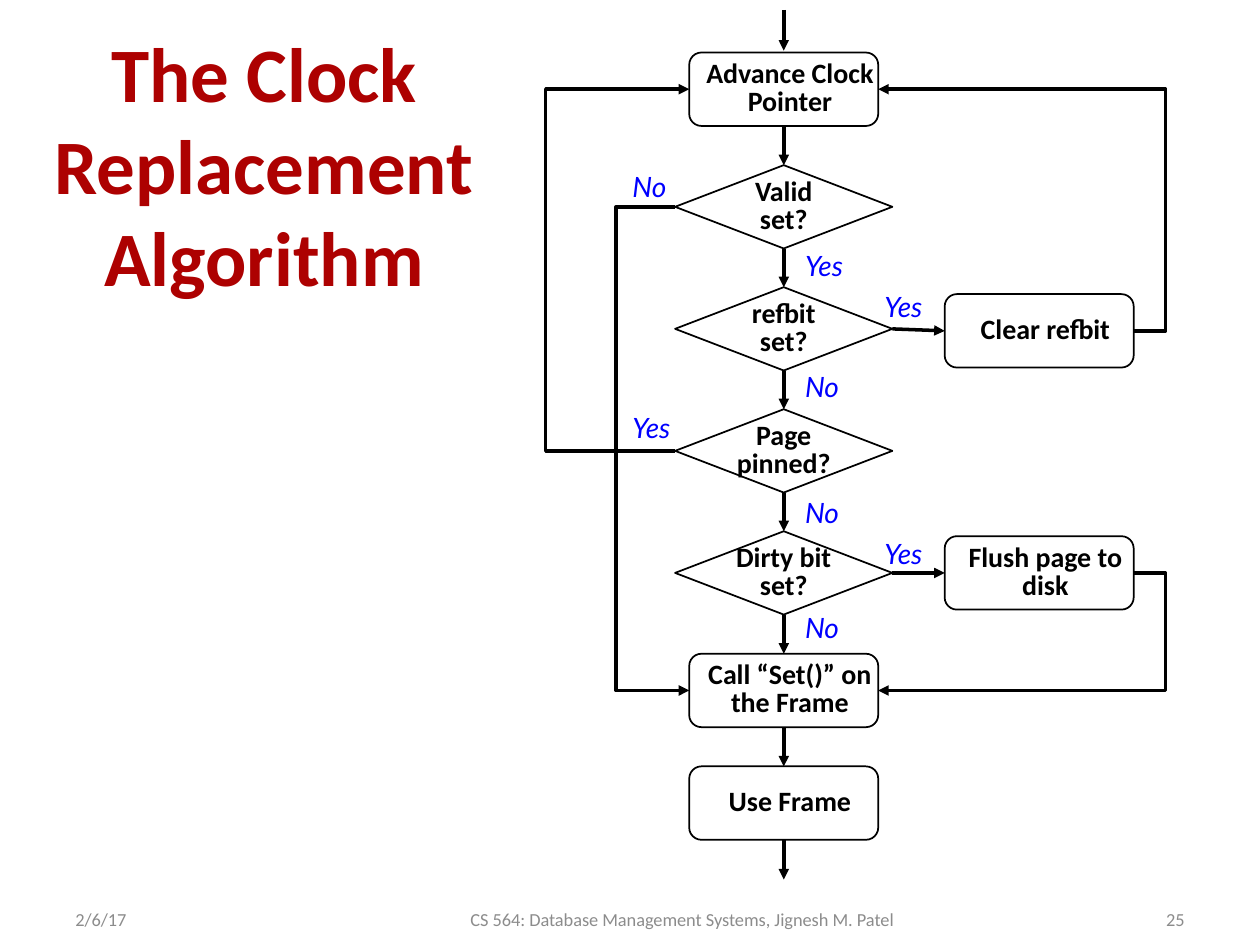
from lxml import etree
from pptx import Presentation
from pptx.dml.color import RGBColor
from pptx.enum.shapes import MSO_CONNECTOR, MSO_SHAPE
from pptx.enum.text import MSO_ANCHOR, MSO_AUTO_SIZE, PP_ALIGN
from pptx.oxml.ns import qn
from pptx.util import Cm, Pt

BOX, DIAMOND = MSO_SHAPE.ROUNDED_RECTANGLE, MSO_SHAPE.DIAMOND
STRAIGHT, ELBOW = MSO_CONNECTOR.STRAIGHT, MSO_CONNECTOR.ELBOW
LEFT, CENTER, RIGHT = PP_ALIGN.LEFT, PP_ALIGN.CENTER, PP_ALIGN.RIGHT
MIDDLE, TOP_ANCHOR = MSO_ANCHOR.MIDDLE, MSO_ANCHOR.TOP
NO_FIT = MSO_AUTO_SIZE.NONE

# Connection sites of boxes and diamonds
TOP, WEST, BOTTOM, EAST = range(4)

SIZES = {BOX: (3.81, 1.48), DIAMOND: (4.38, 1.68)}
MAIN_X, SIDE_X = 15.8, 20.95  # column centres
DIAMOND_TOP, DIAMOND_STEP = 3.33, 2.46
BLACK, RED, BLUE, GRAY = "000000", "AD0101", "0000FF", "8C8C8C"


def color(value):
    return RGBColor.from_string(value)


def set_text(s, text, size=16, font="Calibri", fill=BLACK, bold=False,
             italic=False, align=LEFT, anchor=MIDDLE, spacing=None,
             wrap=True, margins=None):
    tf = s.text_frame
    tf.auto_size = NO_FIT
    tf.word_wrap = wrap
    tf.vertical_anchor = anchor
    if margins:
        tf.margin_left, tf.margin_top, tf.margin_right, tf.margin_bottom = map(Cm, margins)
    p = tf.paragraphs[0]
    p.alignment = align
    if spacing:
        p.line_spacing = Pt(spacing)
    r = p.add_run()
    r.text = text
    r.font.name, r.font.size = font, Pt(size)
    r.font.bold, r.font.italic = bold, italic
    r.font.color.rgb = color(fill)


def add_title(slide, text):
    s = slide.shapes.title
    s.left, s.top, s.width, s.height = Cm(0.3), Cm(0.25), Cm(10.06), Cm(6.1)
    set_text(s, text, size=44, fill=RED, bold=True, align=CENTER)


def add_text(slide, text, x, y, w, h, **fmt):
    set_text(slide.shapes.add_textbox(Cm(x), Cm(y), Cm(w), Cm(h)), text, **fmt)


def add_node(slide, kind, text, center_x, top):
    w, h = SIZES[kind]
    s = slide.shapes.add_shape(kind, Cm(center_x - w / 2), Cm(top), Cm(w), Cm(h))
    s.shadow.inherit = False
    s.fill.background()
    s.line.color.rgb = color(BLACK)
    s.line.width = Pt(1)
    indent = 0.25 if kind == BOX else 0
    set_text(s, text, bold=True, align=CENTER, spacing=16, margins=(indent, 0, 0, 0))
    return s


def add_arrow(slide, x1=0, y1=0, x2=0, y2=0, kind=STRAIGHT):
    c = slide.shapes.add_connector(kind, Cm(x1), Cm(y1), Cm(x2), Cm(y2))
    c.line.color.rgb = color(BLACK)
    c.line.width = Pt(2)
    etree.SubElement(c.line._get_or_add_ln(), qn("a:tailEnd"), type="triangle")
    etree.SubElement(c._element.spPr, qn("a:effectLst"))
    return c


def link(slide, start, start_site, end, end_site, via_x=None):
    """Join two nodes; via_x is where an elbow's vertical part runs."""
    c = add_arrow(slide, kind=STRAIGHT if via_x is None else ELBOW)
    c.begin_connect(start, start_site)
    c.end_connect(end, end_site)
    if via_x is not None:
        ratio = (Cm(via_x) - c.begin_x) / (c.end_x - c.begin_x)
        guides = c._element.spPr.find(qn("a:prstGeom")).get_or_add_avLst()
        etree.SubElement(guides, qn("a:gd"), name="adj1",
                         fmla=f"val {round(ratio * 100000)}")


def main():
    prs = Presentation()
    prs.slide_width, prs.slide_height = Cm(25.4), Cm(19.05)
    slide = prs.slides.add_slide(prs.slide_layouts[5])
    add_title(slide, "The Clock Replacement Algorithm")

    # Footer
    for text, x, w, align in [
        ("2/6/17", 1.27, 5.92, LEFT),
        ("CS 564: Database Management Systems, Jignesh M. Patel", 7.62, 12.27, CENTER),
        ("25", 20.32, 3.81, RIGHT),
    ]:
        add_text(slide, text, x, 18.2, w, 0.64, size=10.5, fill=GRAY, align=align)

    # Steps and decisions
    advance = add_node(slide, BOX, "Advance Clock Pointer", MAIN_X, 1.06)
    questions = ["Valid set?", "refbit set?", "Page pinned?", "Dirty bit set?"]
    valid, refbit, pinned, dirty = [
        add_node(slide, DIAMOND, text, MAIN_X, DIAMOND_TOP + i * DIAMOND_STEP)
        for i, text in enumerate(questions)
    ]
    call_set = add_node(slide, BOX, "Call “Set()” on the Frame", MAIN_X, 13.18)
    use = add_node(slide, BOX, "Use Frame", MAIN_X, 15.45)
    clear = add_node(slide, BOX, "Clear refbit", SIDE_X, 5.93)
    flush = add_node(slide, BOX, "Flush page to disk", SIDE_X, 10.81)

    # Main flow, with its entry and exit
    column = [advance, valid, refbit, pinned, dirty, call_set, use]
    for start, end in zip(column, column[1:]):
        link(slide, start, BOTTOM, end, TOP)
    add_arrow(slide, MAIN_X, 0.2, MAIN_X, 1.02)
    add_arrow(slide, MAIN_X, 16.93, MAIN_X, 17.73)

    # Branches
    link(slide, refbit, EAST, clear, WEST)
    link(slide, dirty, EAST, flush, WEST)
    link(slide, clear, EAST, advance, EAST, via_x=23.5)
    link(slide, flush, EAST, call_set, EAST, via_x=23.5)
    link(slide, pinned, WEST, advance, WEST, via_x=11)
    link(slide, valid, WEST, call_set, WEST, via_x=12.42)

    # Answers
    for text, x, y in [
        ("Yes", 15.98, 4.88), ("No", 15.98, 7.32), ("No", 15.98, 9.86),
        ("No", 15.98, 12.19), ("Yes", 17.58, 5.72), ("Yes", 17.58, 10.69),
        ("No", 12.5, 3.3), ("Yes", 12.5, 8.15),
    ]:
        add_text(slide, text, x, y, 1.52 if text == "Yes" else 1.37, 0.94,
                 font="Lato", fill=BLUE, italic=True, anchor=TOP_ANCHOR, wrap=False)

    prs.save("out.pptx")


if __name__ == "__main__":
    main()
